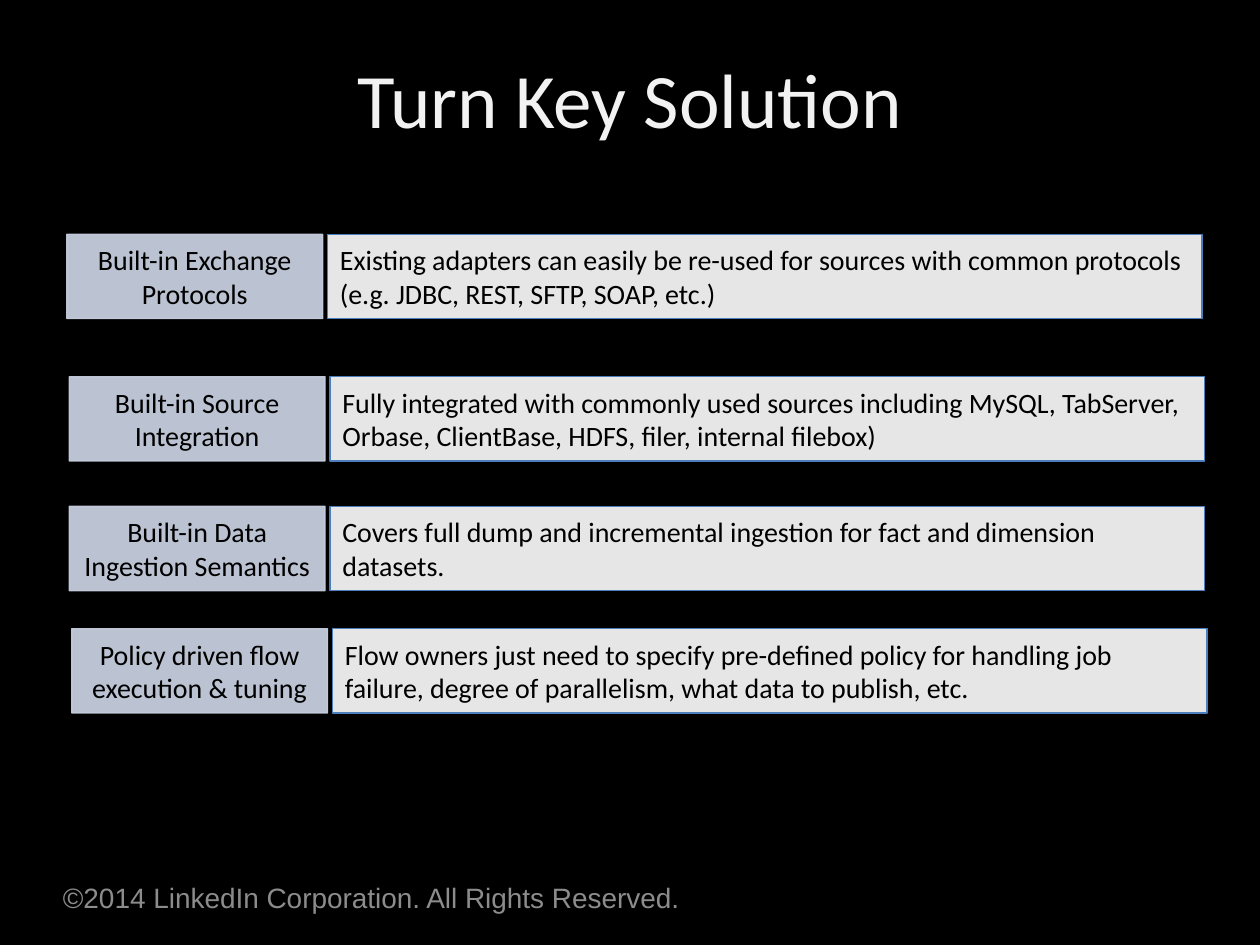
import lxml.etree
import pptx
import pptx.dml.color
import pptx.enum.shapes
import pptx.enum.text
import pptx.oxml.ns
import pptx.util

Pt = pptx.util.Pt
ALIGN = pptx.enum.text.PP_ALIGN

# Left, top, label and detail of each row
ROWS = [
    (38.2, 133.9, "Built-in Exchange Protocols",
     "Existing adapters can easily be re-used for sources with common "
     "protocols (e.g. JDBC, REST, SFTP, SOAP, etc.)"),
    (39.6, 215.3, "Built-in Source Integration",
     "Fully integrated with commonly used sources including MySQL, TabServer, "
     "Orbase, ClientBase, HDFS, filer, internal filebox)"),
    (39.6, 289.4, "Built-in Data Ingestion Semantics",
     "Covers full dump and incremental ingestion for fact and dimension "
     "datasets."),
    (41, 359.3, "Policy driven flow execution & tuning",
     "Flow owners just need to specify pre-defined policy for handling job "
     "failure, degree of parallelism, what data to publish, etc."),
]


def tint(part, color):
    """Give a fill or a font a hex colour."""
    if hasattr(part, "solid"):
        part.solid()
        part = part.fore_color
    else:
        part = part.color
    part.rgb = pptx.dml.color.RGBColor.from_string(color)


def fade(fill, share):
    """Set the opacity of a solid fill, in percent."""
    node = fill.fore_color._xFill[0]
    tag = pptx.oxml.ns.qn("a:alpha")
    lxml.etree.SubElement(node, tag).set("val", str(share * 1000))


def write(shape, text, color, size, align=ALIGN.LEFT, face="Calibri", **frame):
    """Put one paragraph in a shape."""
    body = shape.text_frame
    look = {"word_wrap": True,
            "vertical_anchor": pptx.enum.text.MSO_ANCHOR.MIDDLE, **frame}
    for name, value in look.items():
        setattr(body, name, value)
    para = body.paragraphs[0]
    para.text = text
    para.alignment = align
    for name, value in {"name": face, "size": Pt(size)}.items():
        setattr(para.font, name, value)
    tint(para.font, color)


def panel(slide, box, text, fill, edge, align, clear=False):
    """Draw one bordered box of a row."""
    kind = pptx.enum.shapes.MSO_SHAPE.RECTANGLE
    shape = slide.shapes.add_shape(kind, *map(Pt, box))
    shape.shadow.inherit = False
    tint(shape.fill, fill)
    fade(shape.fill, 90)
    tint(shape.line.fill, edge)
    shape.line.width = Pt(0.75)
    if clear:
        fade(shape.line.fill, 90)
    write(shape, text, "000000", 16, align)


def row(slide, box, label, detail):
    """Draw a label with its detail to the right."""
    left, top, width, height = box
    wide, gap = 146.2, 2.8
    panel(slide, (left, top, wide, height), label,
          "D0D8E8", "CBD3E3", ALIGN.CENTER, clear=True)
    panel(slide, (left + wide + gap, top, width - wide - gap, height), detail,
          "FFFFFF", "4B7EBC", ALIGN.LEFT)


def title(slide, box, text):
    shape = slide.shapes.add_textbox(*map(Pt, box))
    write(shape, text, "F2F2F2", 44, ALIGN.CENTER)


def footer(slide, box, text):
    shape = slide.shapes.add_textbox(*map(Pt, box))
    sides = ("left", "top", "right", "bottom")
    write(shape, text, "8C8C8C", 16, face="Arial",
          **{f"margin_{side}": 0 for side in sides})


def main():
    deck = pptx.Presentation()
    deck.slide_width, deck.slide_height = Pt(720), Pt(540)
    slide = deck.slides.add_slide(deck.slide_layouts[6])
    tint(slide.background.fill, "000000")

    footer(slide, (36, 506.2, 422.6, 13),
           "©2014 LinkedIn Corporation. All Rights Reserved.")
    title(slide, (36, 10.8, 648, 90), "Turn Key Solution")
    for left, top, label, detail in ROWS:
        row(slide, (left, top, 648.7, 48.2), label, detail)

    deck.save("out.pptx")


if __name__ == "__main__":
    main()
